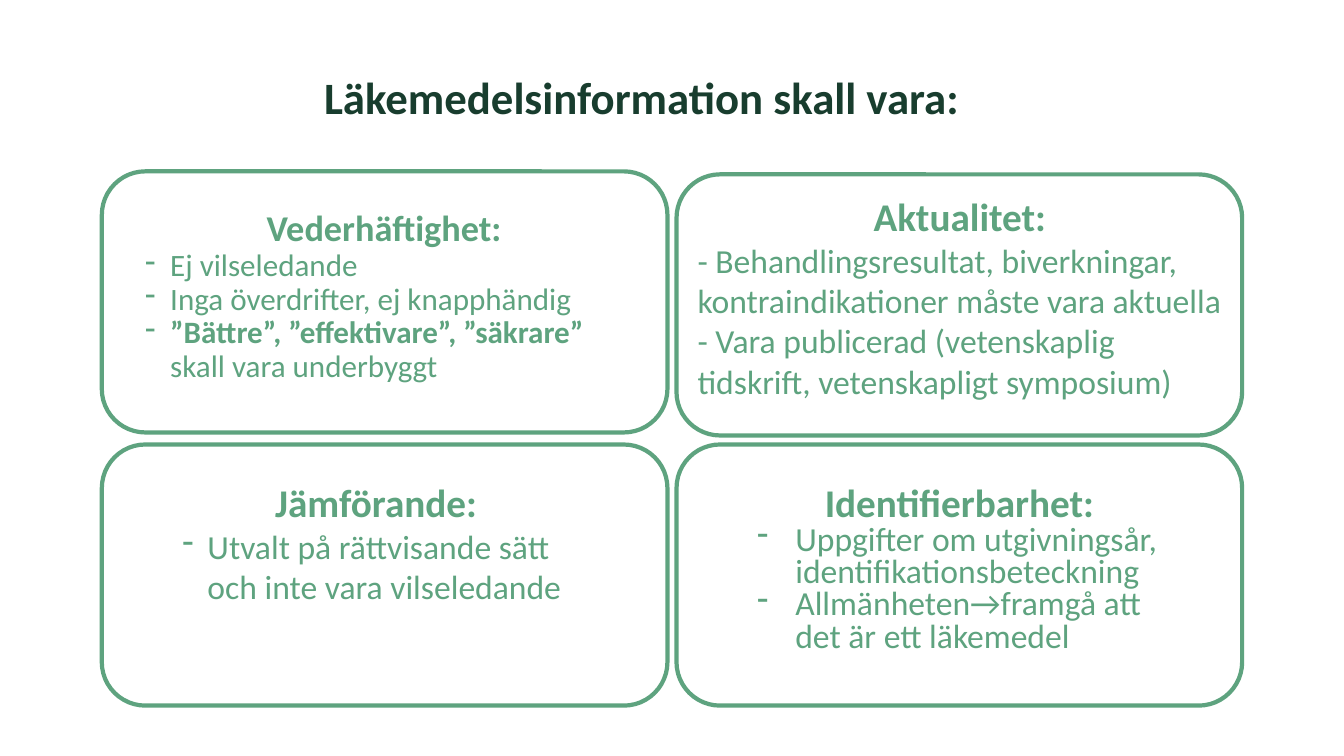
from lxml.etree import SubElement
from pptx import Presentation
from pptx.dml.color import RGBColor
from pptx.enum.shapes import MSO_SHAPE
from pptx.enum.text import PP_ALIGN
from pptx.oxml.ns import qn
from pptx.util import Inches, Pt

GREEN = RGBColor(0x5E, 0xA3, 0x7F)
DARK_GREEN = RGBColor(0x18, 0x3D, 0x2E)
FONT = "Calibri"

# Content: each line is a list of (text, bold) spans
TITLE = "Läkemedelsinformation skall vara:"
TITLE_AREA = (1.6, 0.64, 9.53, 0.94)
CARDS = [
    dict(column=0, row=0, drop=0, area=(1.34, 2.04, 4.94, 1.94),
         heading="Vederhäftighet:", heading_size=25.9, size=22.2, spacing=0.9, indent=0.25,
         lines=[[("Ej vilseledande", False)],
                [("Inga överdrifter, ej knapphändig", False)],
                [("”Bättre”, ”effektivare”, ”säkrare” ", True),
                 ("skall vara underbyggt", False)]]),
    dict(column=1, row=0, drop=0.03, area=(6.82, 1.86, 5.4, 2.27),
         heading="Aktualitet:", heading_size=28, size=24, spacing=1.0, indent=0,
         lines=[[("- Behandlingsresultat, biverkningar, kontraindikationer måste vara aktuella", False)],
                [("- Vara publicerad (vetenskaplig tidskrift, vetenskapligt symposium)", False)]]),
    dict(column=0, row=1, drop=0, area=(1.71, 4.7, 4.04, 1.5),
         heading="Jämförande:", heading_size=28, size=24, spacing=1.0, indent=0.25,
         lines=[[("Utvalt på rättvisande sätt och inte vara vilseledande", False)]]),
    dict(column=1, row=1, drop=0, area=(7.41, 4.79, 4.21, 1.8),
         heading="Identifierbarhet:", heading_size=28, size=24, spacing=0.8, indent=0.38,
         lines=[[("Uppgifter om utgivningsår, identifikationsbeteckning", False)],
                [("Allmänheten→framgå att det är ett läkemedel", False)]]),
]

# Card grid, in inches
GRID_LEFT, GRID_TOP = 1.01, 1.7
CARD_WIDTH, CARD_HEIGHT = 5.61, 2.59
COLUMN_STEP, ROW_STEP = 5.7, 2.71


def add_box(area):
    frame = page.shapes.add_textbox(*map(Inches, area)).text_frame
    frame.word_wrap = True
    return frame


def add_text(para, text, size, color=GREEN, bold=False):
    span = para.add_run()
    span.text = text
    span.font.name = FONT
    span.font.size = Pt(size)
    span.font.bold = bold
    span.font.color.rgb = color


def add_dash(para, indent):
    properties = para._p.get_or_add_pPr()
    properties.set("marL", str(Inches(indent)))
    properties.set("indent", str(-Inches(indent)))
    SubElement(properties, qn("a:buFontTx"))
    SubElement(properties, qn("a:buChar")).set("char", "-")


deck = Presentation()
deck.slide_width, deck.slide_height = Inches(13.33), Inches(7.5)
page = deck.slides.add_slide(deck.slide_layouts[6])

# Title
title = add_box(TITLE_AREA).paragraphs[0]
title.alignment = PP_ALIGN.CENTER
add_text(title, TITLE, 32, color=DARK_GREEN, bold=True)

for card in CARDS:
    # Heading and lines
    frame = add_box(card["area"])
    heading = frame.paragraphs[0]
    heading.alignment = PP_ALIGN.CENTER
    heading.line_spacing = card["spacing"]
    add_text(heading, card["heading"], card["heading_size"], bold=True)
    for line in card["lines"]:
        para = frame.add_paragraph()
        para.line_spacing = card["spacing"]
        if card["indent"]:
            add_dash(para, card["indent"])
        for text, bold in line:
            add_text(para, text, card["size"], bold=bold)

    # Rounded frame
    left = GRID_LEFT + card["column"] * COLUMN_STEP
    top = GRID_TOP + card["row"] * ROW_STEP + card["drop"]
    outline = page.shapes.add_shape(MSO_SHAPE.ROUNDED_RECTANGLE, Inches(left), Inches(top),
                                    Inches(CARD_WIDTH), Inches(CARD_HEIGHT))
    outline.shadow.inherit = False
    outline.fill.background()
    outline.line.color.rgb = GREEN
    outline.line.width = Pt(3)

deck.save("out.pptx")
